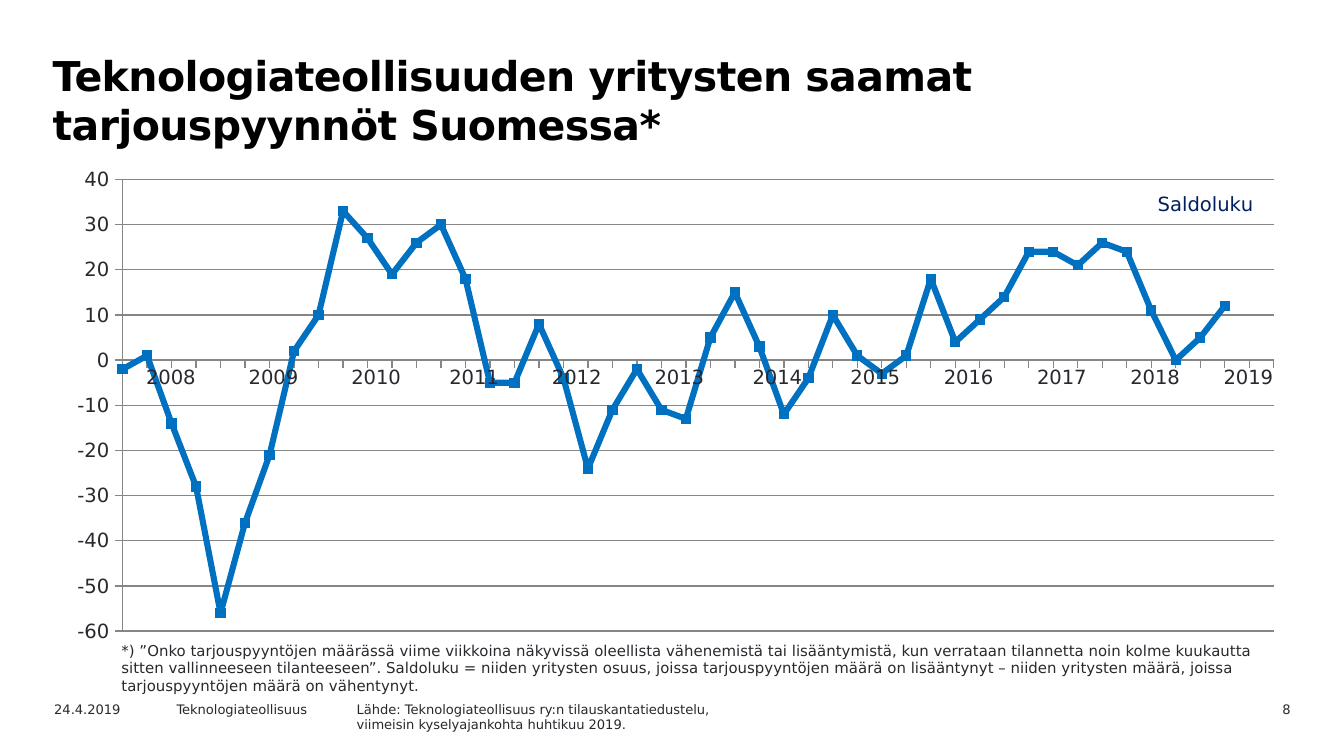
from lxml import etree
from pptx import Presentation
from pptx.chart.data import CategoryChartData
from pptx.dml.color import RGBColor
from pptx.enum.chart import XL_CHART_TYPE, XL_TICK_LABEL_POSITION, XL_TICK_MARK
from pptx.enum.text import MSO_ANCHOR, PP_ALIGN
from pptx.oxml.ns import qn
from pptx.util import Pt

LEFT, CENTER, RIGHT = PP_ALIGN.LEFT, PP_ALIGN.CENTER, PP_ALIGN.RIGHT
TOP = MSO_ANCHOR.TOP
LINE = XL_CHART_TYPE.LINE
NO_LABELS = XL_TICK_LABEL_POSITION.NONE
LOW_LABELS = XL_TICK_LABEL_POSITION.LOW
OUTSIDE, NO_TICK = XL_TICK_MARK.OUTSIDE, XL_TICK_MARK.NONE
PLAIN_TABLE_STYLE = "{2D5ABB26-0587-4C30-8999-92F81FD0307C}"

BALANCES = [-2, 1, -14, -28, -56, -36, -21, 2, 10, 33, 27, 19, 26, 30, 18, -5,
            -5, 8, -4, -24, -11, -2, -11, -13, 5, 15, 3, -12, -4, 10, 1, -3,
            1, 18, 4, 9, 14, 24, 24, 21, 26, 24, 11, 0, 5, 12, None, None]
YEARS = range(2008, 2020)
YEAR_WIDTHS = [55, 55, 55, 50, 60, 50, 55] + [50] * 5
FOOTNOTE = (
    "*) ”Onko tarjouspyyntöjen määrässä viime viikkoina näkyvissä oleellista "
    "vähenemistä tai lisääntymistä, kun verrataan tilannetta noin kolme kuukautta "
    "sitten vallinneeseen tilanteeseen”. Saldoluku = niiden yritysten osuus, joissa "
    "tarjouspyyntöjen määrä on lisääntynyt – niiden yritysten määrä, joissa "
    "tarjouspyyntöjen määrä on vähentynyt.")


def color(value):
    return RGBColor.from_string(value)


def set_layout(parent, **fractions):
    """Place a chart part by fractions of the chart area."""
    layout = parent.find(qn("c:layout"))
    if layout is None:
        layout = etree.Element(qn("c:layout"))
        parent.insert(0, layout)
    manual = etree.SubElement(layout, qn("c:manualLayout"))
    settings = {"xMode": "edge", "yMode": "edge", **fractions}
    if "w" in fractions:
        settings = {"layoutTarget": "inner", **settings}
    for name, value in settings.items():
        etree.SubElement(manual, qn(f"c:{name}")).set("val", str(value))


class SlideBuilder:
    font_name = "DejaVu Sans"
    text_color = "29282E"
    grid_color = "868686"
    series_color = "0070C0"

    def __init__(self, slide):
        self.slide = slide

    def style_font(self, font, size, font_color=None, bold=False):
        font.name = self.font_name
        font.size = Pt(size)
        font.bold = bold
        font.color.rgb = color(font_color or self.text_color)

    def add_run(self, paragraph, text, size, font_color=None, bold=False):
        run = paragraph.add_run()
        run.text = text
        self.style_font(run.font, size, font_color, bold)
        return run

    def title(self, text, left, top, width, height):
        shape = self.slide.shapes.title
        shape.left, shape.top = Pt(left), Pt(top)
        shape.width, shape.height = Pt(width), Pt(height)
        frame = shape.text_frame
        frame.word_wrap = True
        frame.vertical_anchor = TOP
        paragraph = frame.paragraphs[0]
        paragraph.alignment = LEFT
        run = self.add_run(paragraph, text, 22, "000000", True)
        run.font._element.set("spc", "-30")

    def text(self, lines, left, top, width, height, size=7, alignment=LEFT):
        box = self.slide.shapes.add_textbox(Pt(left), Pt(top), Pt(width), Pt(height))
        frame = box.text_frame
        frame.word_wrap = True
        for index, line in enumerate(lines):
            paragraph = frame.add_paragraph() if index else frame.paragraphs[0]
            paragraph.alignment = alignment
            self.add_run(paragraph, line, size)

    def line_chart(self, title, values, left, top, width, height):
        data = CategoryChartData()
        data.categories = [str(quarter + 1) for quarter in range(len(values))]
        data.add_series("Saldoluku", values)
        chart = self.slide.shapes.add_chart(
            LINE, Pt(left), Pt(top), Pt(width), Pt(height), data).chart
        self.style_font(chart.font, 10.5)
        chart.has_legend = False
        chart.has_title = True
        paragraph = chart.chart_title.text_frame.paragraphs[0]
        self.add_run(paragraph, title, 10.5, "002060")
        set_layout(chart.chart_title._element, x=0.89, y=0.06)
        set_layout(chart._chartSpace.chart.plotArea, x=0.054, y=0.043, w=0.933, h=0.931)

        plot = chart.plots[0]
        plot.vary_by_categories = False
        series = plot.series[0]
        series.smooth = False
        series.marker.style = None
        series.format.line.width = Pt(3.25)
        series.format.line.color.rgb = color(self.series_color)

        category_axis, value_axis = chart.category_axis, chart.value_axis
        category_axis.tick_label_position = NO_LABELS
        category_axis.has_major_gridlines = False
        value_axis.tick_label_position = LOW_LABELS
        value_axis.minimum_scale, value_axis.maximum_scale = -60, 40
        value_axis.major_unit = 10
        value_axis.has_major_gridlines = True
        self.style_font(value_axis.tick_labels.font, 10.5)
        for axis in (category_axis, value_axis):
            axis.major_tick_mark = OUTSIDE
            axis.minor_tick_mark = NO_TICK
        for part in (category_axis, value_axis, value_axis.major_gridlines):
            part.format.line.width = Pt(0.75)
            part.format.line.color.rgb = color(self.grid_color)
        self.start_line_on_axis(value_axis._element)

    def start_line_on_axis(self, axis_element):
        """Put the points on the tick marks instead of between them."""
        for old in axis_element.findall(qn("c:crossBetween")):
            axis_element.remove(old)
        crossing = etree.Element(qn("c:crossBetween"))
        crossing.set("val", "midCat")
        axis_element.find(qn("c:crosses")).addnext(crossing)

    def label_row(self, labels, widths, left, top, height):
        frame = self.slide.shapes.add_table(
            1, len(widths), Pt(left), Pt(top), Pt(sum(widths)), Pt(height))
        table = frame.table
        table.first_row = table.horz_banding = False
        table._tbl.tblPr.find(qn("a:tableStyleId")).text = PLAIN_TABLE_STYLE
        table.rows[0].height = Pt(height)
        for index, (label, width) in enumerate(zip(labels, widths)):
            table.columns[index].width = Pt(width)
            cell = table.cell(0, index)
            cell.fill.background()
            cell.margin_top = cell.margin_bottom = Pt(3)
            paragraph = cell.text_frame.paragraphs[0]
            paragraph.alignment = CENTER
            self.add_run(paragraph, str(label), 10.5)


def main():
    presentation = Presentation()
    presentation.slide_width, presentation.slide_height = Pt(720), Pt(405)
    slide = presentation.slides.add_slide(presentation.slide_layouts[5])
    builder = SlideBuilder(slide)
    builder.title("Teknologiateollisuuden yritysten saamat tarjouspyynnöt Suomessa*",
                  21, 23.5, 629, 67)
    footer_top, footer_height = 372, 13
    builder.text(["8"], 631, footer_top, 67.5, footer_height, alignment=RIGHT)
    builder.text(["24.4.2019"], 22, footer_top, 72, footer_height)
    builder.text(["Teknologiateollisuus"], 87.5, footer_top, 102, footer_height)
    builder.text(["Lähde: Teknologiateollisuus ry:n tilauskantatiedustelu,",
                  "viimeisin kyselyajankohta huhtikuu 2019."],
                 184, footer_top, 234, footer_height)
    builder.line_chart("Saldoluku", BALANCES, 30, 85, 661, 260)
    builder.label_row(YEARS, YEAR_WIDTHS, 64, 193.5, 18.5)
    builder.text([FOOTNOTE], 58, 340, 623, 36, size=8)
    presentation.save("out.pptx")


if __name__ == "__main__":
    main()
